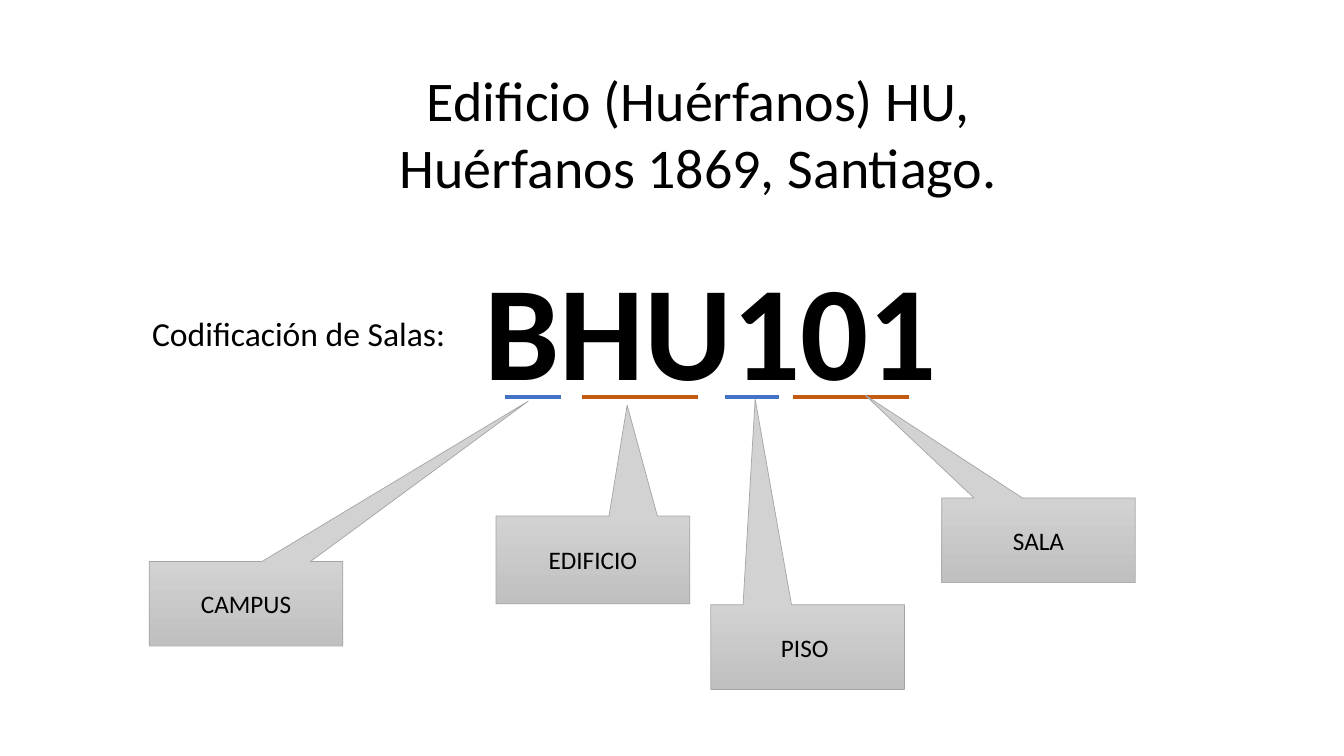
from lxml.etree import SubElement
from pptx import Presentation
from pptx.dml.color import RGBColor
from pptx.enum.shapes import MSO_CONNECTOR, MSO_SHAPE
from pptx.enum.text import MSO_ANCHOR, MSO_AUTO_SIZE, PP_ALIGN
from pptx.oxml.ns import qn
from pptx.util import Pt

PX = 9144
FONT = "Calibri"
BLACK = RGBColor(0x00, 0x00, 0x00)
BLUE = RGBColor(0x44, 0x72, 0xC4)
ORANGE = RGBColor(0xC5, 0x5A, 0x11)
GRAY_LIGHT = RGBColor(0xD2, 0xD2, 0xD2)
GRAY_DARK = RGBColor(0xC0, 0xC0, 0xC0)
GRAY_LINE = RGBColor(0xA5, 0xA5, 0xA5)

CALLOUTS = [
    ("CAMPUS", (148, 557, 192, 84), (524, 398)),
    ("EDIFICIO", (492, 512, 192, 87), (622, 402)),
    ("PISO ", (705, 600, 192, 84), (749, 396)),
    ("SALA", (934, 494, 192, 84), (858, 392)),
]


def emu(box):
    """Turn px lengths into EMU."""
    return [v * PX for v in box]


def write(tf, text, size, bold=False, anchor=MSO_ANCHOR.TOP):
    """Write one centred run into a text frame."""
    tf.word_wrap = True
    tf.auto_size = MSO_AUTO_SIZE.NONE
    tf.vertical_anchor = anchor
    p = tf.paragraphs[0]
    p.alignment = PP_ALIGN.CENTER
    r = p.add_run()
    r.text = text
    r.font.name = FONT
    r.font.size = Pt(size)
    r.font.bold = bold
    r.font.color.rgb = BLACK


def add_title(s, box):
    """Place the building's name and address in the title placeholder."""
    sp = s.shapes.title
    sp.left, sp.top, sp.width, sp.height = emu(box)
    write(sp.text_frame, "Edificio (Huérfanos) HU, Huérfanos 1869, Santiago.", 40)


def add_label(shapes, box, text, size, bold=False):
    """Add a centred text box."""
    write(shapes.add_textbox(*emu(box)).text_frame, text, size, bold)


def add_room_code(s, box):
    """Group the sample room code with the underline of each of its parts."""
    x, y, w, h = box
    shapes = s.shapes.add_group_shape().shapes
    add_label(shapes, box, "BHU101", 96, True)
    base = y + 155
    for dx, length, color in ((121, 55, BLUE), (407, 115, ORANGE),
                              (339, 54, BLUE), (197, 115, ORANGE)):
        ends = emu((x + dx, base, x + dx + length, base))
        c = shapes.add_connector(MSO_CONNECTOR.STRAIGHT, *ends)
        c.line.color.rgb = color
        c.line.width = Pt(3)
        SubElement(c._element.spPr, qn("a:effectLst"))


def add_callout(s, box, text, tip):
    """Add a grey callout whose pointer ends at the tip."""
    x, y, w, h = box
    sp = s.shapes.add_shape(MSO_SHAPE.RECTANGULAR_CALLOUT, *emu(box))
    sp.shadow.inherit = False
    sp.adjustments[0] = (tip[0] - x) / w - 0.5
    sp.adjustments[1] = (tip[1] - y) / h - 0.5
    sp.fill.gradient()
    sp.fill.gradient_angle = 270
    for stop, color in zip(sp.fill.gradient_stops, (GRAY_LIGHT, GRAY_DARK)):
        stop.color.rgb = color
    sp.line.color.rgb = GRAY_LINE
    sp.line.width = Pt(0.5)
    write(sp.text_frame, text, 18, anchor=MSO_ANCHOR.MIDDLE)


def main():
    """Build the slide and save it."""
    prs = Presentation()
    prs.slide_width, prs.slide_height = emu((1333, 750))
    s = prs.slides.add_slide(prs.slide_layouts[5])
    add_title(s, (314, 60, 757, 145))
    add_label(s.shapes, (117, 305, 366, 118), "Codificación de Salas: ", 24)
    add_room_code(s, (380, 239, 650, 172))
    for text, box, tip in CALLOUTS:
        add_callout(s, box, text, tip)
    prs.save("out.pptx")


if __name__ == "__main__":
    main()
